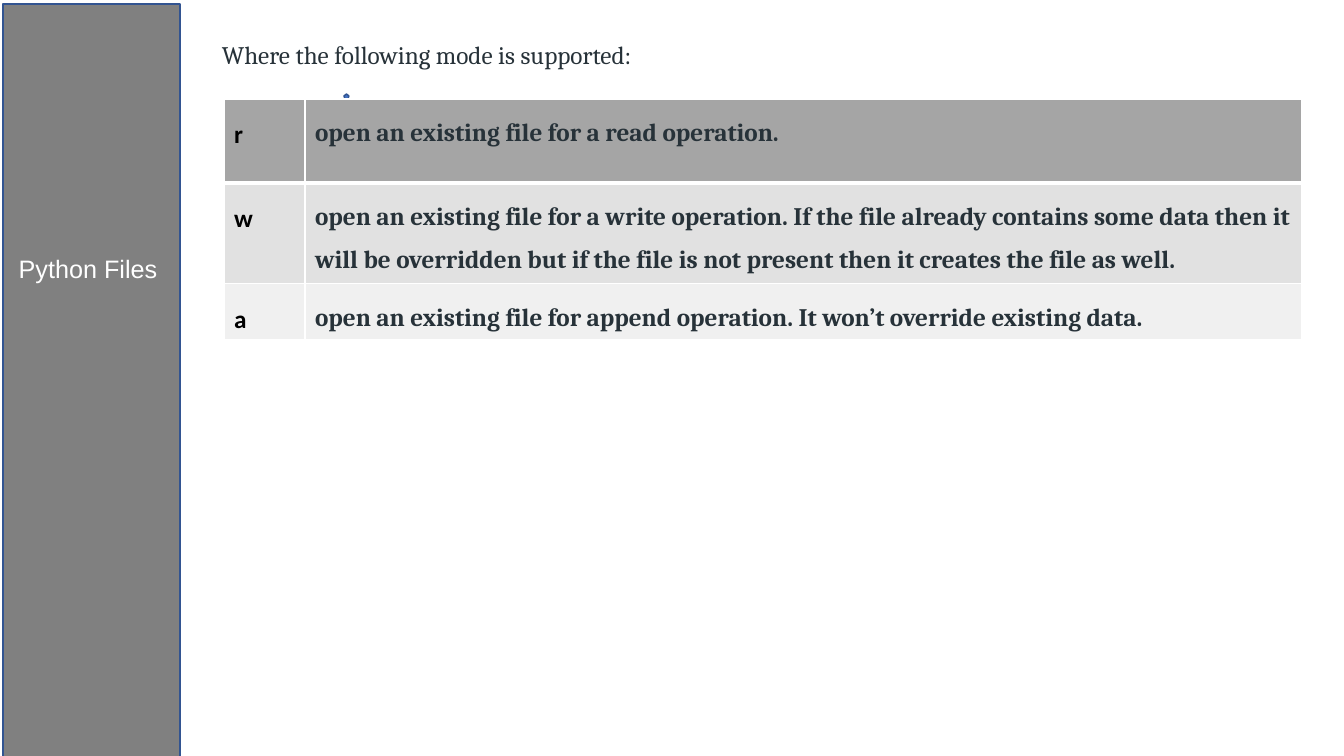
from dataclasses import dataclass

from lxml.etree import SubElement
from pptx import Presentation
from pptx.dml.color import RGBColor as RGB
from pptx.enum.shapes import MSO_SHAPE as SHAPE
from pptx.enum.text import PP_ALIGN as ALIGN
from pptx.oxml.ns import qn
from pptx.util import Emu, Pt

EMU_PER_PX = 914400 / 100.8


@dataclass(frozen=True)
class Theme:
    sidebar: str = "808080"
    accent: str = "4472C4"
    outline: str = "325491"
    white: str = "FFFFFF"
    black: str = "000000"
    ink: str = "273239"
    row_fills: tuple = ("A5A5A5", "E1E1E1", "F0F0F0")
    size: int = 18
    spacing: float = 1.5
    thin: int = 1
    thick: int = 3


THEME = Theme()

MODES = (
    ("r", "open an existing file for a read operation."),
    ("w", "open an existing file for a write operation. If the file already contains "
          "some data then it will be overridden but if the file is not present then "
          "it creates the file as well."),
    ("a", "open an existing file for append operation. It won’t override existing data."),
)
COLUMN_WIDTHS = (81, 997)
ROW_HEIGHTS = (84, 84, 48)


def px(n):
    return Emu(round(n * EMU_PER_PX))


def box(*lengths):
    return [px(n) for n in lengths]


def write(tf, text, font, color, bold=False, align=ALIGN.LEFT):
    tf.word_wrap = True
    p = tf.paragraphs[0]
    p.text = text
    p.alignment = align
    p.line_spacing = THEME.spacing
    p.font.name = font
    p.font.size = Pt(THEME.size)
    p.font.bold = bold
    p.font.color.rgb = RGB.from_string(color)


def add_block(s, kind, bounds, fill):
    sp = s.shapes.add_shape(kind, *box(*bounds))
    sp.shadow.inherit = False
    sp.fill.solid()
    sp.fill.fore_color.rgb = RGB.from_string(fill)
    sp.line.color.rgb = RGB.from_string(THEME.outline)
    sp.line.width = Pt(THEME.thin)


def add_text(s, bounds, text, font, color, align=ALIGN.LEFT):
    sp = s.shapes.add_textbox(*box(*bounds))
    write(sp.text_frame, text, font, color, align=align)


def set_borders(cell, top, bottom):
    """Draw white borders; top and bottom widths are in points."""
    tc_pr = cell._tc.get_or_add_tcPr()
    widths = {"lnL": THEME.thin, "lnR": THEME.thin, "lnT": top, "lnB": bottom}
    for side, width in widths.items():
        ln = SubElement(tc_pr, qn(f"a:{side}"), w=str(Pt(width)))
        fill = SubElement(ln, qn("a:solidFill"))
        SubElement(fill, qn("a:srgbClr"), val=THEME.white)


def add_mode_table(s, left, top):
    frame = s.shapes.add_table(len(MODES), len(COLUMN_WIDTHS),
                               *box(left, top, sum(COLUMN_WIDTHS), sum(ROW_HEIGHTS)))
    table = frame.table
    for column, width in zip(table.columns, COLUMN_WIDTHS):
        column.width = px(width)
    styles = (("Calibri", THEME.black), ("Cambria", THEME.ink))
    for i, (texts, height, fill) in enumerate(zip(MODES, ROW_HEIGHTS, THEME.row_fills)):
        table.rows[i].height = px(height)
        above = THEME.thick if i == 1 else THEME.thin
        below = THEME.thick if i == 0 else THEME.thin
        for cell, text, (font, color) in zip(table.rows[i].cells, texts, styles):
            set_borders(cell, above, below)
            cell.fill.solid()
            cell.fill.fore_color.rgb = RGB.from_string(fill)
            write(cell.text_frame, text, font, color, bold=True)


def main():
    prs = Presentation()
    prs.slide_width, prs.slide_height = box(1344, 756)
    s = prs.slides.add_slide(prs.slide_layouts[6])
    add_block(s, SHAPE.RECTANGLE, (3, 4, 177, 756), THEME.sidebar)
    add_block(s, SHAPE.REGULAR_PENTAGON, (344, 94, 5, 5), THEME.accent)
    add_text(s, (3, 233, 170, 97), "Python Files", "Arial", THEME.white, ALIGN.CENTER)
    add_text(s, (212, 19, 1110, 50), "Where the following mode is supported:",
             "Cambria", THEME.ink)
    add_mode_table(s, 224, 99)
    prs.save("out.pptx")


if __name__ == "__main__":
    main()
